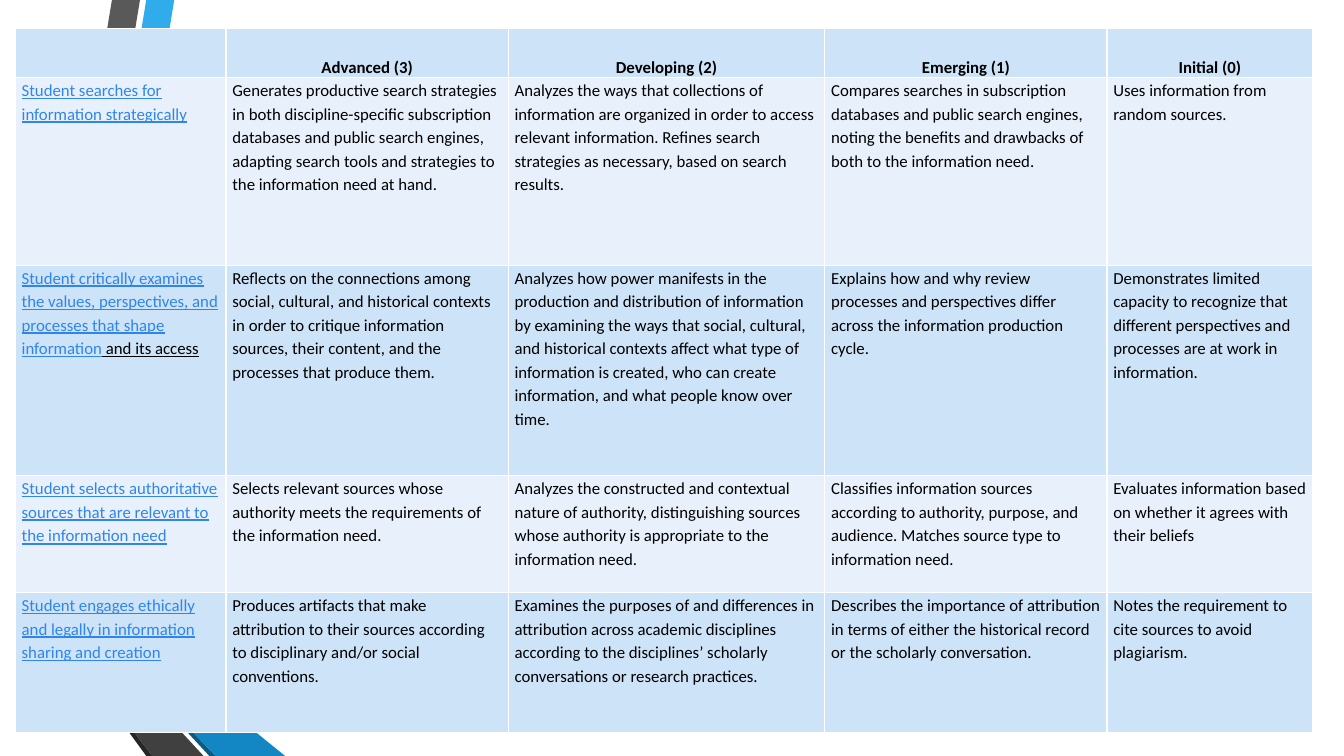
from lxml.etree import SubElement
from pptx import Presentation
from pptx.dml.color import RGBColor
from pptx.enum.text import MSO_ANCHOR as Anchor, PP_ALIGN as Align
from pptx.oxml.ns import qn
from pptx.util import Pt

BLACK, WHITE, LINK = "000000", "FFFFFF", "3085ED"
BANDS = ("CDE3F8", "E8F1FB")
COLS = (150.5, 201.6, 226.1, 201.6, 146.9)
ROWS = (35.3, 133.9, 150.5, 83.5, 100.1)

RIBBONS = (
    ("30ACEC", ((24.5, 416.2), (44, 419.8), (113, 0), (93, 0))),
    ("595959", ((88.5, 0), (68.5, 0), (0, 412.6), (20, 415.4))),
    ("262626", ((0, 412.6), (93, 540), (97.2, 540))),
    ("0C5A82", ((24.5, 416.9), (138, 540), (142.5, 540))),
    ("1287C3", ((24.5, 416.9), (142.5, 540), (192.2, 540), (44, 419.8),
                (24.5, 416.2))),
    ("404040", ((133.9, 540), (23, 419.8), (19.4, 415.6), (0, 412.6),
                (97.2, 540))),
)

HEADERS = ("", "Advanced (3)", "Developing (2)", "Emerging (1)", "Initial (0)")
CRITERIA = (
    (("Student searches for information strategically",),
     "Generates productive search strategies in both discipline-specific subscription "
     "databases and public search engines, adapting search tools and strategies to the "
     "information need at hand.",
     "Analyzes the ways that collections of information are organized in order to access "
     "relevant information. Refines search strategies as necessary, based on search results.",
     "Compares searches in subscription databases and public search engines, noting the "
     "benefits and drawbacks of both to the information need.",
     "Uses information from random sources."),
    (("Student critically examines the values, perspectives, and processes that shape "
      "information", " and its access"),
     "Reflects on the connections among social, cultural, and historical contexts in order "
     "to critique information sources, their content, and the processes that produce them.",
     "Analyzes how power manifests in the production and distribution of information by "
     "examining the ways that social, cultural, and historical contexts affect what type of "
     "information is created, who can create information, and what people know over time.",
     "Explains how and why review processes and perspectives differ across the information "
     "production cycle.",
     "Demonstrates limited capacity to recognize that different perspectives and processes "
     "are at work in information."),
    (("Student selects authoritative sources that are relevant to the information need",),
     "Selects relevant sources whose authority meets the requirements of the information need.",
     "Analyzes the constructed and contextual nature of authority, distinguishing sources "
     "whose authority is appropriate to the information need.",
     "Classifies information sources according to authority, purpose, and audience. Matches "
     "source type to information need.",
     "Evaluates information based on whether it agrees with their beliefs"),
    (("Student engages ethically and legally in information sharing and creation",),
     "Produces artifacts that make attribution to their sources according to disciplinary "
     "and/or social conventions.",
     "Examines the purposes of and differences in attribution across academic disciplines "
     "according to the disciplines’ scholarly conversations or research practices.",
     "Describes the importance of attribution in terms of either the historical record or "
     "the scholarly conversation.",
     "Notes the requirement to cite sources to avoid plagiarism."),
)


def paint(fmt, color):
    fmt.solid()
    fmt.fore_color.rgb = RGBColor.from_string(color)


def add_ribbons(s, left, top):
    for color, points in RIBBONS:
        corners = [(Pt(left + x), Pt(top + y)) for x, y in points]
        builder = s.shapes.build_freeform(*corners[0])
        builder.add_line_segments(corners[1:])
        sp = builder.convert_to_shape()
        sp.shadow.inherit = False
        paint(sp.fill, color)
        sp.line.fill.background()


def style_cell(cell, band):
    tcPr = cell._tc.get_or_add_tcPr()
    for side in ("lnL", "lnR", "lnT", "lnB"):
        ln = SubElement(tcPr, qn(f"a:{side}"), w=str(Pt(1)))
        SubElement(SubElement(ln, qn("a:solidFill")), qn("a:srgbClr"), val=WHITE)
    paint(cell.fill, band)
    cell.margin_left = cell.margin_right = Pt(4.5)
    cell.margin_top = cell.margin_bottom = 0


def write_cell(cell, texts, header, criterion):
    p = cell.text_frame.paragraphs[0]
    p.line_spacing = 1.15
    if header:
        p.alignment = Align.CENTER
        cell.vertical_anchor = Anchor.BOTTOM
    for i, text in enumerate(texts):
        r = p.add_run()
        r.text = text
        r.font.name = "Calibri"
        r.font.size = Pt(12)
        r.font.bold = header
        r.font.underline = criterion
        paint(r.font.fill, LINK if criterion and i == 0 else BLACK)


def add_rubric(s, left, top):
    frame = s.shapes.add_table(len(ROWS), len(COLS), Pt(left), Pt(top),
                               Pt(sum(COLS)), Pt(sum(ROWS)))
    table = frame.table
    for col, width in zip(table.columns, COLS):
        col.width = Pt(width)
    for row, height in zip(table.rows, ROWS):
        row.height = Pt(height)
    for i, values in enumerate((HEADERS, *CRITERIA)):
        for j, value in enumerate(values):
            cell = table.cell(i, j)
            style_cell(cell, BANDS[i % 2])
            if value:
                texts = (value,) if isinstance(value, str) else value
                write_cell(cell, texts, i == 0, i > 0 and j == 0)


def main():
    prs = Presentation()
    prs.slide_width, prs.slide_height = Pt(960), Pt(540)
    s = prs.slides.add_slide(prs.slide_layouts[6])
    add_ribbons(s, 11.5, 0)
    add_rubric(s, 11, 20.2)
    prs.save("out.pptx")


if __name__ == "__main__":
    main()
